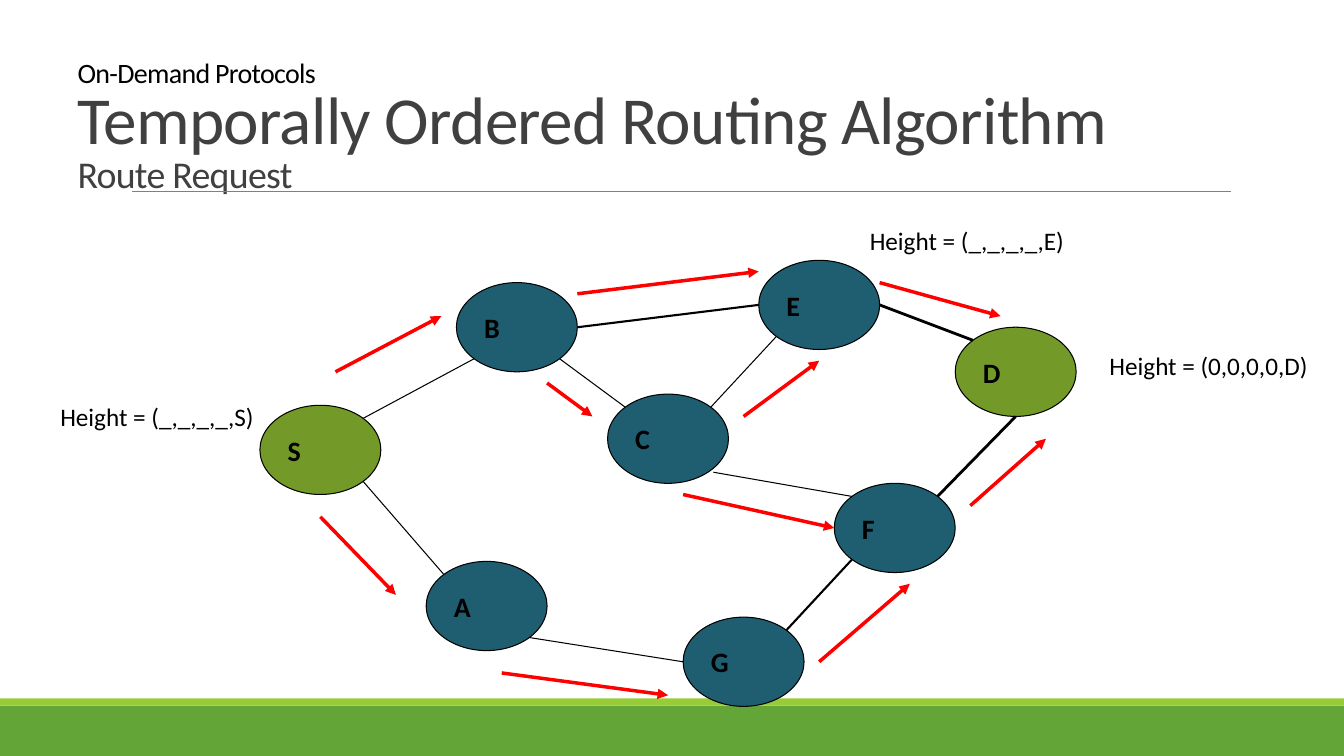
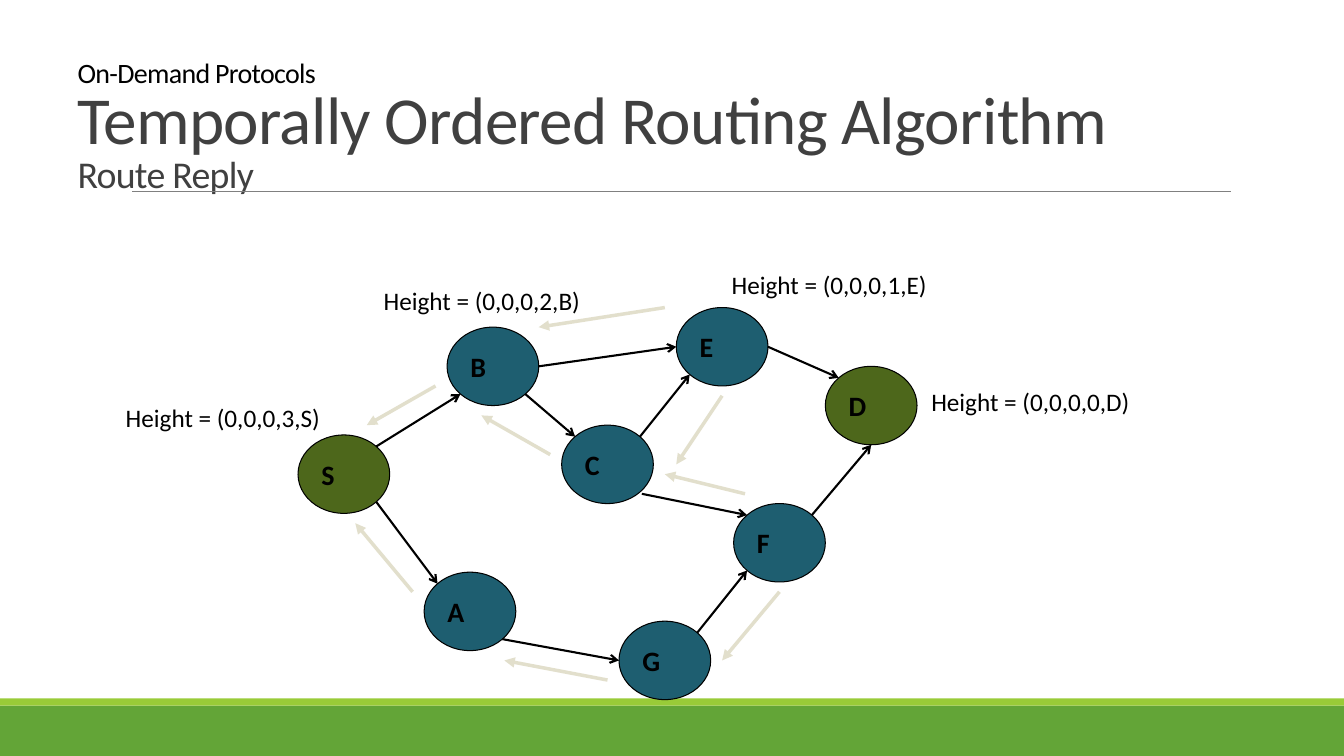
"""Build two slides on route request and route reply in an ad hoc network."""
from copy import deepcopy
from math import sqrt

from lxml import etree
from pptx import Presentation
from pptx import util as u
from pptx.dml.color import RGBColor
from pptx.enum import shapes, text
from pptx.oxml.ns import qn

COLORS = {
    "band": "63A537", "stripe": "99CB38", "rule": "808080", "title": "404040",
    "black": "000000", "node": "1E5E70", "request_end": "739A28",
    "reply_end": "4D671B", "request": "FF0000", "reply": "E2DFCC",
}
FONT = "Calibri"
GRID_COLUMNS, GRID_ROWS, NODE_CELLS = 54, 40, 8

NODES = {
    "S": (0, 13), "B": (13, 2), "E": (33, 0), "D": (46, 6),
    "A": (11, 27), "C": (23, 12), "F": (38, 20), "G": (28, 32),
}
END_NODES = "SD"
DIAGONAL = sqrt(0.5)
SITES = {
    "left": (-1, 0), "right": (1, 0), "bottom": (0, 1),
    "top left": (-DIAGONAL, -DIAGONAL), "top right": (DIAGONAL, -DIAGONAL),
    "bottom left": (-DIAGONAL, DIAGONAL), "bottom right": (DIAGONAL, DIAGONAL),
    "below right": (0.75, 0.75),
}
LINKS = [
    ("B", "bottom right", "C", "top left", 0.75),
    ("S", "top right", "B", "bottom left", 0.75),
    ("B", "right", "E", "left", 1.5),
    ("C", "top right", "E", "bottom left", 0.75),
    ("E", "right", "D", "top left", 2),
    ("F", "top right", "D", "bottom", 2),
    ("A", "bottom right", "G", "left", 0.75),
    ("G", "top right", "F", "bottom left", 1.5),
    ("S", "bottom right", "A", "top left", 0.75),
    ("C", "below right", "F", "top left", 0.75),
]
SLIDES = [
    {
        "subtitle": "Route Request", "origin": (6.55, 6.56), "size": (20.57, 11.24),
        "end_color": "request_end", "arrow_color": "request",
        "link_width": None, "link_head": None,
        "arrows": [
            ((5, 10), (12, 5)), ((4, 23), (9, 30)), ((32, 14), (37, 9)),
            ((19, 11), (22, 14)), ((16, 37), (27, 39)), ((21, 3), (33, 1)),
            ((37, 36), (43, 29)), ((28, 21), (38, 24)), ((41, 2), (49, 5)),
            ((47, 22), (52, 16)),
        ],
        "heights": [
            ("(0,0,0,0,D)", 27.71, 8.71), ("(_,_,_,_,E)", 21.67, 5.56),
            ("(_,_,_,_,S)", 1.27, 9.98),
        ],
    },
    {
        "subtitle": "Route Reply", "origin": (7.51, 7.75), "size": (15.6, 9.88),
        "end_color": "reply_end", "arrow_color": "reply",
        "link_width": 1.5, "link_head": "arrow",
        "arrows": [
            ((32, 0), (21, 2)), ((37, 9), (33, 16)), ((39, 19), (32, 17)),
            ((42, 29), (37, 36)), ((22, 15), (16, 11)), ((27, 38), (18, 36)),
            ((12, 8), (6, 12)), ((10, 29), (5, 22)),
        ],
        "heights": [
            ("(0,0,0,1,E)", 18.19, 6.65), ("(0,0,0,2,B)", 9.42, 7.06),
            ("(0,0,0,3,S)", 2.92, 10.01), ("(0,0,0,0,D)", 23.22, 9.6),
        ],
    },
]


def rgb(name):
    """Return the named colour."""
    return RGBColor.from_string(COLORS[name])


def set_font(font, size, color="black", bold=False):
    """Format a font."""
    font.name, font.size, font.bold = FONT, u.Pt(size), bold
    font.color.rgb = rgb(color)


def add_filled(slide, kind, box, fill, outline=None):
    """Add a filled shape, with a thin outline if one is named."""
    shape = slide.shapes.add_shape(kind, *map(u.Cm, box))
    shape.shadow.inherit = False
    shape.fill.solid()
    shape.fill.fore_color.rgb = rgb(fill)
    if outline:
        shape.line.color.rgb = rgb(outline)
        shape.line.width = u.Pt(0.75)
    else:
        shape.line.fill.background()
    return shape


def add_line(slide, start, end, color, width, head=None):
    """Add a straight line, with an arrowhead at its end if one is named."""
    line = slide.shapes.add_connector(
        shapes.MSO_CONNECTOR.STRAIGHT, *map(u.Cm, (*start, *end)))
    line.line.color.rgb = rgb(color)
    line.line.width = u.Pt(width)
    properties = line.element.spPr
    if head:
        etree.SubElement(properties.find(qn("a:ln")), qn("a:tailEnd"), type=head)
    etree.SubElement(properties, qn("a:effectLst"))


def add_title(slide, subtitle):
    """Fill the title placeholder with three lines of different sizes."""
    title = slide.shapes.title
    title.left, title.top, title.width, title.height = map(
        u.Cm, (1.7, 1.27, 30.48, 3.81))
    frame = title.text_frame
    frame.auto_size = text.MSO_AUTO_SIZE.NONE
    frame.vertical_anchor = text.MSO_ANCHOR.BOTTOM
    paragraph = frame.paragraphs[0]
    paragraph.alignment = text.PP_ALIGN.LEFT
    paragraph.line_spacing = 0.85
    lines = [
        ("On-Demand Protocols", 20, "black"),
        ("Temporally Ordered Routing Algorithm", 48, "title"),
        (subtitle, 27, "title"),
    ]
    for index, (words, size, color) in enumerate(lines):
        if index:
            paragraph.add_line_break()
            line_break = paragraph._p.findall(qn("a:br"))[-1]
            line_break.append(deepcopy(run_properties))
        run = paragraph.add_run()
        run.text = words
        set_font(run.font, size, color)
        run_properties = run._r.find(qn("a:rPr"))
        run_properties.set("spc", "-50")


def add_frame(slide, subtitle):
    """Add the parts that all slides share."""
    rectangle = shapes.MSO_SHAPE.RECTANGLE
    add_filled(slide, rectangle, (0, 17.78, 33.87, 1.27), "band")
    add_filled(slide, rectangle, (0, 17.6, 33.87, 0.18), "stripe")
    add_line(slide, (3.33, 4.83), (31.01, 4.83), "rule", 0.5)
    add_title(slide, subtitle)


def add_network(slide, content):
    """Draw the nodes, links and message arrows on the slide's grid."""
    cell_width = content["size"][0] / GRID_COLUMNS
    cell_height = content["size"][1] / GRID_ROWS
    left, top = content["origin"]
    radius = NODE_CELLS / 2

    def place(column, row):
        return left + column * cell_width, top + row * cell_height

    def place_site(name, site):
        (column, row), (across, down) = NODES[name], SITES[site]
        return place(column + radius * (1 + across), row + radius * (1 + down))

    for name, cell in NODES.items():
        box = (*place(*cell), NODE_CELLS * cell_width, NODE_CELLS * cell_height)
        fill = content["end_color"] if name in END_NODES else "node"
        node = add_filled(slide, shapes.MSO_SHAPE.OVAL, box, fill, "black")
        frame = node.text_frame
        frame.text = name
        frame.word_wrap = False
        frame.vertical_anchor = text.MSO_ANCHOR.MIDDLE
        frame.paragraphs[0].alignment = text.PP_ALIGN.LEFT
        set_font(frame.paragraphs[0].font, 20, bold=True)
    for start, start_site, end, end_site, width in LINKS:
        add_line(slide, place_site(start, start_site), place_site(end, end_site),
                 "black", content["link_width"] or width, content["link_head"])
    for start, end in content["arrows"]:
        add_line(slide, place(*start), place(*end),
                 content["arrow_color"], 2.5, "triangle")


def add_height(slide, value, left, top):
    """Add a label with a node's height."""
    label = slide.shapes.add_textbox(*map(u.Cm, (left, top, 5.65, 1.02)))
    frame = label.text_frame
    frame.text = f"Height = {value}"
    frame.word_wrap = False
    frame.auto_size = text.MSO_AUTO_SIZE.SHAPE_TO_FIT_TEXT
    set_font(frame.paragraphs[0].font, 18)


def main():
    """Build and save the presentation."""
    presentation = Presentation()
    presentation.slide_width, presentation.slide_height = u.Cm(33.87), u.Cm(19.05)
    layout = presentation.slide_layouts.get_by_name("Title Only")
    for content in SLIDES:
        slide = presentation.slides.add_slide(layout)
        add_frame(slide, content["subtitle"])
        add_network(slide, content)
        for height in content["heights"]:
            add_height(slide, *height)
    presentation.save("out.pptx")


if __name__ == "__main__":
    main()
